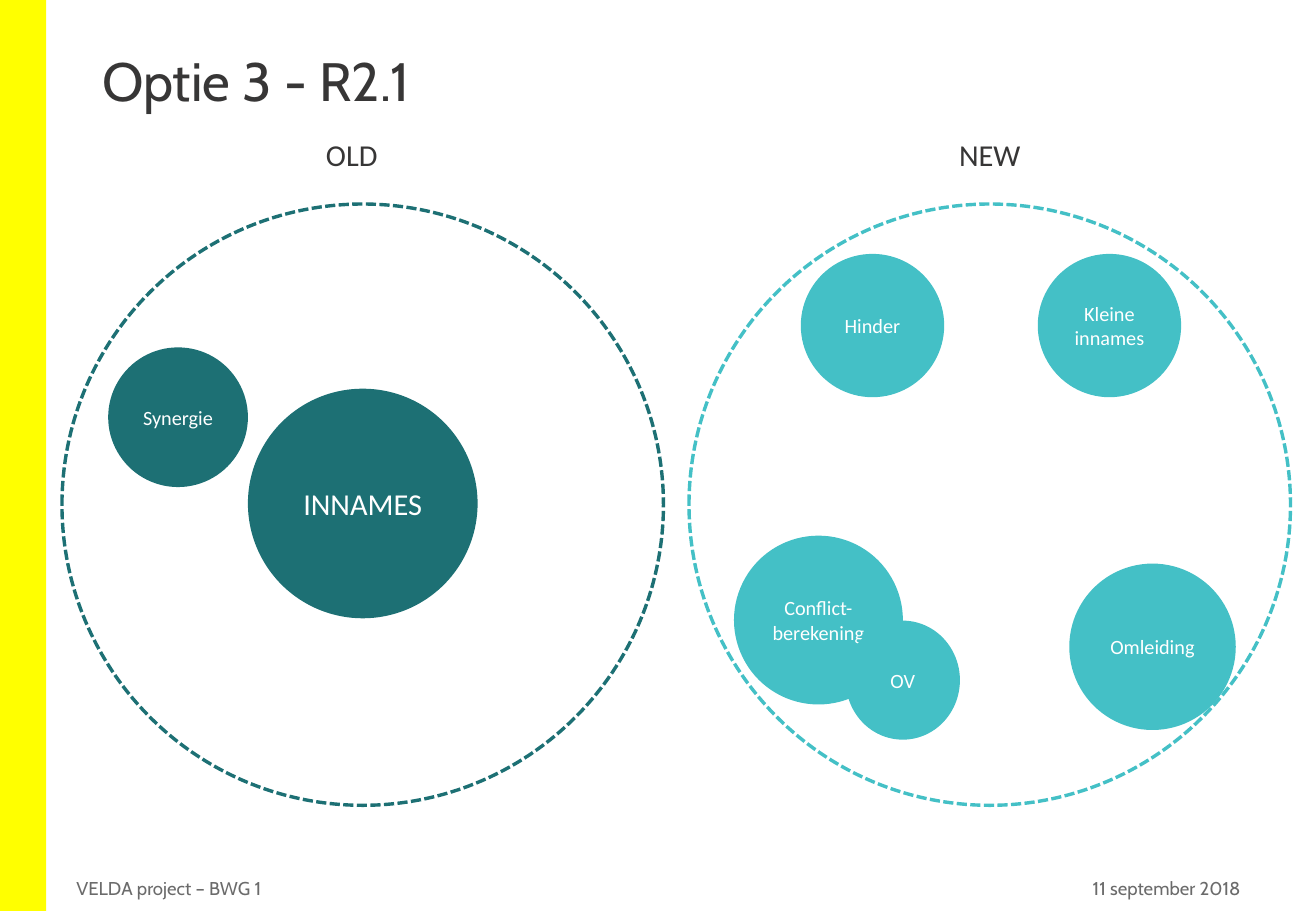
from pptx import Presentation
from pptx.dml.color import RGBColor
from pptx.enum import dml, shapes, text
from pptx.util import Inches, Pt

YELLOW = RGBColor(0xFF, 0xFF, 0x00)
WHITE = RGBColor(0xFF, 0xFF, 0xFF)
INK = RGBColor(0x37, 0x36, 0x36)
GREY = RGBColor(0x6B, 0x6B, 0x6B)
OLD_TEAL = RGBColor(0x1D, 0x70, 0x74)
NEW_TEAL = RGBColor(0x44, 0xC0, 0xC6)

LEFT, CENTER, RIGHT = text.PP_ALIGN.LEFT, text.PP_ALIGN.CENTER, text.PP_ALIGN.RIGHT
TOP, MIDDLE = text.MSO_ANCHOR.TOP, text.MSO_ANCHOR.MIDDLE


def write(frame, words, size=12, font="Calibri", color=WHITE, align=CENTER,
          anchor=MIDDLE, wrap=True, inset=None, spacing=None):
    frame.word_wrap = wrap
    frame.auto_size = text.MSO_AUTO_SIZE.NONE
    frame.vertical_anchor = anchor
    if inset is not None:
        frame.margin_left = frame.margin_right = Inches(inset)
        frame.margin_top = frame.margin_bottom = Inches(inset)
    paragraph = frame.paragraphs[0]
    paragraph.alignment = align
    paragraph.line_spacing = spacing
    run = paragraph.add_run()
    run.text = words
    run.font.size = Pt(size)
    run.font.name = font
    run.font.color.rgb = color


class Board:
    heading_font = "Cabin"

    def __init__(self, deck):
        self.slide = deck.slides.add_slide(deck.slide_layouts[5])

    def title(self, words, left, top, width, height):
        heading = self.slide.shapes.title
        heading.left, heading.top = Inches(left), Inches(top)
        heading.width, heading.height = Inches(width), Inches(height)
        write(heading.text_frame, words, size=32, font=self.heading_font,
              color=INK, align=LEFT, anchor=TOP, spacing=0.9)

    def label(self, words, left, top, width, height, **style):
        box = self.slide.shapes.add_textbox(
            Inches(left), Inches(top), Inches(width), Inches(height))
        write(box.text_frame, words, **style)

    def footer(self, words, left, width, align):
        self.label(words, left, 7.22, width, 0.19, size=11,
                   font=self.heading_font, color=GREY, align=align)

    def solid(self, kind, left, top, width, height, color):
        form = self.slide.shapes.add_shape(
            kind, Inches(left), Inches(top), Inches(width), Inches(height))
        form.shadow.inherit = False
        form.fill.solid()
        form.fill.fore_color.rgb = color
        form.line.fill.background()
        return form

    def bubble(self, words, left, top, width, height, color, **style):
        form = self.solid(shapes.MSO_SHAPE.OVAL, left, top, width, height, color)
        write(form.text_frame, words, **style)

    def ring(self, left, top, diameter, color):
        form = self.solid(shapes.MSO_SHAPE.OVAL, left, top, diameter, diameter, color)
        form.fill.background()
        form.line.color.rgb = color
        form.line.width = Pt(2)
        form.line.dash_style = dml.MSO_LINE.SQUARE_DOT


def main():
    deck = Presentation()
    deck.slide_width, deck.slide_height = Inches(10.83), Inches(7.5)
    board = Board(deck)

    board.solid(shapes.MSO_SHAPE.RECTANGLE, 0, 0, 0.38, 7.5, YELLOW)
    board.title("Optie 3 - R2.1", 0.74, 0.4, 9.34, 1.08)
    board.footer("VELDA project – BWG 1", 0.53, 6.65, LEFT)
    board.footer("11 september 2018", 7.18, 3.13, RIGHT)

    for era, ring_left, label_left, label_width, color in (
        ("OLD", 0.51, 2.58, 0.63, OLD_TEAL),
        ("NEW", 5.67, 7.79, 0.71, NEW_TEAL),
    ):
        board.ring(ring_left, 1.68, 4.95, color)
        board.label(era, label_left, 1.07, label_width, 0.4, size=18,
                    color=INK, anchor=TOP, wrap=False)

    board.bubble("INNAMES", 2.04, 3.2, 1.89, 1.89, OLD_TEAL, size=18)
    for topic, left, top, width, height, color in (
        ("Hinder", 6.59, 2.09, 1.18, 1.18, NEW_TEAL),
        ("Omleiding", 8.8, 4.64, 1.37, 1.37, NEW_TEAL),
        ("Conflict-berekening", 6.04, 4.41, 1.39, 1.39, NEW_TEAL),
        ("Kleine innames", 8.54, 2.09, 1.18, 1.18, NEW_TEAL),
        ("OV", 6.96, 5.11, 0.94, 0.98, NEW_TEAL),
        ("Synergie", 0.89, 2.86, 1.15, 1.15, OLD_TEAL),
    ):
        board.bubble(topic, left, top, width, height, color, inset=0)

    deck.save("out.pptx")


if __name__ == "__main__":
    main()
